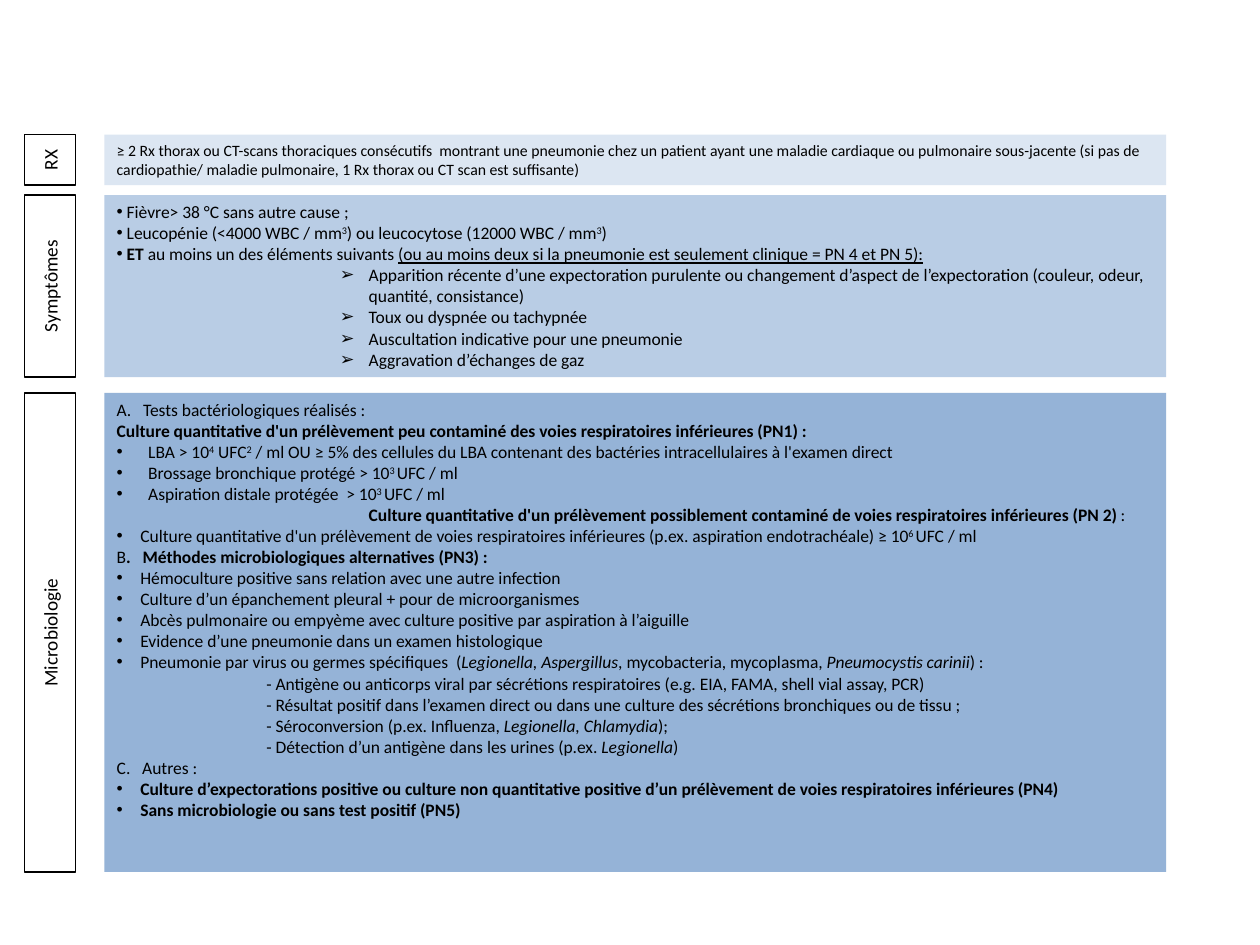
from lxml import etree
from pptx import Presentation
from pptx.dml.color import RGBColor
from pptx.enum.shapes import MSO_SHAPE
from pptx.enum.text import MSO_ANCHOR, PP_ALIGN
from pptx.oxml.ns import qn
from pptx.util import Pt

RECTANGLE = MSO_SHAPE.RECTANGLE
TOP, MIDDLE = MSO_ANCHOR.TOP, MSO_ANCHOR.MIDDLE
LEFT, CENTER = PP_ALIGN.LEFT, PP_ALIGN.CENTER
FONT = "Calibri"

# Paragraph styles: left margin, first-line indent, bullet
STYLES = {
    "plain": (0, 0, None),
    "flush": (0, 0, "•"),
    "arrow": (144, -16.5, "➢"),
    "wide": (18, -18, "•"),
    "item": (13.5, -13.5, "•"),
    "sub": (85.5, 0, None),
    "heading": (144, 0, None),
}

# Inline marks: * bold, ~ italic, _ underline, ^ superscript
MARKS = "*~_^"

RX = [
    ("plain", "≥ 2 Rx thorax ou CT-scans thoraciques consécutifs  montrant une pneumonie chez un patient "
              "ayant une maladie cardiaque ou pulmonaire sous-jacente (si pas de cardiopathie/ maladie "
              "pulmonaire, 1 Rx thorax ou CT scan est suffisante)"),
]
SYMPTOMS = [
    ("flush", " Fièvre> 38 °C sans autre cause ;"),
    ("flush", " Leucopénie (<4000 WBC / mm^3^) ou leucocytose (12000 WBC / mm^3^)"),
    ("flush", "* ET* au moins un des éléments suivants _(ou au moins deux si la pneumonie est seulement "
              "clinique = PN 4 et PN 5):_"),
    ("arrow", "Apparition récente d’une expectoration purulente ou changement d’aspect de l’expectoration "
              "(couleur, odeur, quantité, consistance)"),
    ("arrow", "Toux ou dyspnée ou tachypnée"),
    ("arrow", "Auscultation indicative pour une pneumonie"),
    ("arrow", "Aggravation d’échanges de gaz"),
]
MICROBIOLOGY = [
    ("plain", "A.   Tests bactériologiques réalisés :"),
    ("plain", "*Culture quantitative d'un prélèvement peu contaminé des voies respiratoires inférieures (PN1) :*"),
    ("wide", "LBA > 10^4^ UFC^2^ / ml OU ≥ 5% des cellules du LBA contenant des bactéries intracellulaires "
             "à l'examen direct"),
    ("wide", "Brossage bronchique protégé > 10^3 ^UFC / ml"),
    ("wide", "Aspiration distale protégée  > 10^3 ^UFC / ml"),
    ("heading", "*Culture quantitative d'un prélèvement possiblement contaminé de voies respiratoires "
                "inférieures (PN 2)* :"),
    ("item", "Culture quantitative d'un prélèvement de voies respiratoires inférieures (p.ex. aspiration "
             "endotrachéale) ≥ 10^6 ^UFC / ml"),
    ("plain", "B*.   Méthodes microbiologiques alternatives (PN3) :*"),
    ("item", "Hémoculture positive sans relation avec une autre infection"),
    ("item", "Culture d’un épanchement pleural + pour de microorganismes"),
    ("item", "Abcès pulmonaire ou empyème avec culture positive par aspiration à l’aiguille"),
    ("item", "Evidence d’une pneumonie dans un examen histologique"),
    ("item", "Pneumonie par virus ou germes spécifiques  (~Legionella, Aspergillus~, mycobacteria, "
             "mycoplasma, ~Pneumocystis carinii~) :"),
    ("sub", "- Antigène ou anticorps viral par sécrétions respiratoires (e.g. EIA, FAMA, shell vial assay, PCR)"),
    ("sub", "- Résultat positif dans l’examen direct ou dans une culture des sécrétions bronchiques ou de tissu ;"),
    ("sub", "- Séroconversion (p.ex. Influenza, ~Legionella, Chlamydia~);"),
    ("sub", "- Détection d’un antigène dans les urines (p.ex. ~Legionella~)"),
    ("plain", "C.   Autres :"),
    ("item", "*Culture d’expectorations positive ou culture non quantitative positive d’un prélèvement de "
             "voies respiratoires inférieures (PN4)*"),
    ("item", "*Sans microbiologie ou sans test positif (PN5)*"),
]

# Rows: label, top, height, panel colour, text size, paragraphs
ROWS = [
    ("RX", 77, 28.8, "DCE6F2", 9, RX),
    ("Symptômes", 111.5, 104, "B9CDE5", 10, SYMPTOMS),
    ("Microbiologie", 224.5, 273.8, "95B3D7", 10, MICROBIOLOGY),
]
LABEL_LEFT, LABEL_WIDTH = 14.2, 28.8
PANEL_LEFT, PANEL_WIDTH = 59.6, 606.8


def colour(value):
    return RGBColor.from_string(value)


def split_marks(text):
    """Yield each stretch of text with the set of marks that hold for it."""
    active, stretch = set(), ""
    for letter in text:
        if letter in MARKS:
            if stretch:
                yield stretch, set(active)
            active ^= {letter}
            stretch = ""
        else:
            stretch += letter
    if stretch:
        yield stretch, active


def write(para, text, *, size, align=LEFT, style="plain"):
    margin, indent, bullet = STYLES[style]
    para.alignment = align
    properties = para._p.get_or_add_pPr()
    properties.set("marL", str(Pt(margin)))
    properties.set("indent", str(Pt(indent)))
    if bullet:
        etree.SubElement(properties, qn("a:buFont"), typeface="Arial")
        etree.SubElement(properties, qn("a:buChar"), char=bullet)
    for stretch, active in split_marks(text):
        span = para.add_run()
        span.text = stretch
        font = span.font
        font.name, font.size = FONT, Pt(size)
        font.color.rgb = colour("000000")
        font.bold, font.italic, font.underline = (mark in active for mark in "*~_")
        if "^" in active:
            span._r.get_or_add_rPr().set("baseline", "30000")


def add_box(page, left, top, width, height, *, fill, line=None, anchor=TOP):
    box = page.shapes.add_shape(RECTANGLE, Pt(left), Pt(top), Pt(width), Pt(height))
    box.shadow.inherit = False
    box.fill.solid()
    box.fill.fore_color.rgb = colour(fill)
    if line:
        box.line.color.rgb = colour(line)
        box.line.width = Pt(0.75)
    else:
        box.line.fill.background()
    box.text_frame.word_wrap = True
    box.text_frame.vertical_anchor = anchor
    return box


def main():
    deck = Presentation()
    deck.slide_width, deck.slide_height = Pt(720), Pt(540)
    page = deck.slides.add_slide(deck.slide_layouts[6])

    for label, top, height, fill, size, paragraphs in ROWS:
        # Rotated label
        box = add_box(page, LABEL_LEFT, top, LABEL_WIDTH, height,
                      fill="FFFFFF", line="000000", anchor=MIDDLE)
        box.text_frame._txBody.bodyPr.set("vert", "vert270")
        write(box.text_frame.paragraphs[0], label, size=11, align=CENTER)

        # Criteria panel
        frame = add_box(page, PANEL_LEFT, top, PANEL_WIDTH, height, fill=fill).text_frame
        for index, (style, text) in enumerate(paragraphs):
            para = frame.add_paragraph() if index else frame.paragraphs[0]
            write(para, text, size=size, style=style)

    deck.save("out.pptx")


if __name__ == "__main__":
    main()
